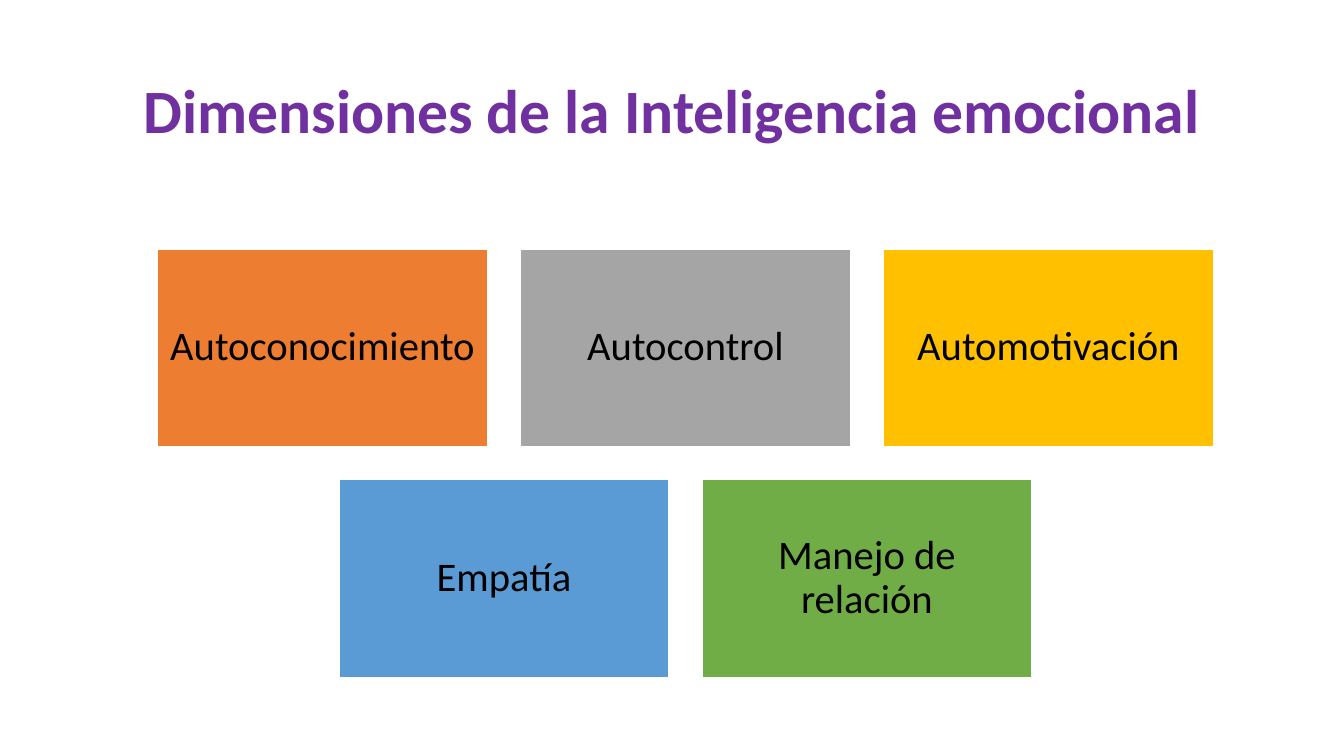
from pptx import Presentation
from pptx.dml.color import RGBColor
from pptx.enum.shapes import MSO_SHAPE
from pptx.enum.text import MSO_ANCHOR, MSO_AUTO_SIZE, PP_ALIGN
from pptx.util import Inches, Pt

ROWS = [
    [("Autoconocimiento", "ED7D31"), ("Autocontrol", "A5A5A5"), ("Automotivación", "FFC000")],
    [("Empatía", "5B9BD5"), ("Manejo de relación", "70AD47")],
]
BOX_W, BOX_H = 3.27, 1.96
GAP = 0.33
GRID_CENTER, GRID_TOP = 6.8, 2.47


def rgb(value):
    return RGBColor.from_string(value)


def write(tf, text, size, color, bold=False):
    tf.word_wrap = True
    tf.auto_size = MSO_AUTO_SIZE.NONE
    tf.vertical_anchor = MSO_ANCHOR.MIDDLE
    p = tf.paragraphs[0]
    p.alignment = PP_ALIGN.CENTER
    p.line_spacing = 0.9
    r = p.add_run()
    r.text = text
    r.font.name = "Calibri"
    r.font.size = Pt(size)
    r.font.bold = bold
    r.font.color.rgb = rgb(color)


def add_title(slide, text):
    sp = slide.shapes.title
    sp.left, sp.top = Inches(0.92), Inches(0.4)
    sp.width, sp.height = Inches(11.5), Inches(1.45)
    write(sp.text_frame, text, 44, "7030A0", bold=True)


def add_box(slide, left, top, text, fill):
    sp = slide.shapes.add_shape(
        MSO_SHAPE.RECTANGLE, Inches(left), Inches(top), Inches(BOX_W), Inches(BOX_H))
    sp.shadow.inherit = False
    sp.fill.solid()
    sp.fill.fore_color.rgb = rgb(fill)
    sp.line.color.rgb = rgb("FFFFFF")
    sp.line.width = Pt(1)
    tf = sp.text_frame
    tf.margin_left = tf.margin_right = tf.margin_top = tf.margin_bottom = Inches(0.11)
    write(tf, text, 29, "000000")


def add_grid(slide, rows):
    """Lay out the rows of boxes, each row centred on the same axis."""
    for i, row in enumerate(rows):
        row_width = len(row) * (BOX_W + GAP) - GAP
        left = GRID_CENTER - row_width / 2
        top = GRID_TOP + i * (BOX_H + GAP)
        for j, (text, fill) in enumerate(row):
            add_box(slide, left + j * (BOX_W + GAP), top, text, fill)


def main():
    prs = Presentation()
    prs.slide_width, prs.slide_height = Inches(13.33), Inches(7.5)
    slide = prs.slides.add_slide(prs.slide_layouts[5])
    add_title(slide, "Dimensiones de la Inteligencia emocional")
    add_grid(slide, ROWS)
    prs.save("out.pptx")


if __name__ == "__main__":
    main()
